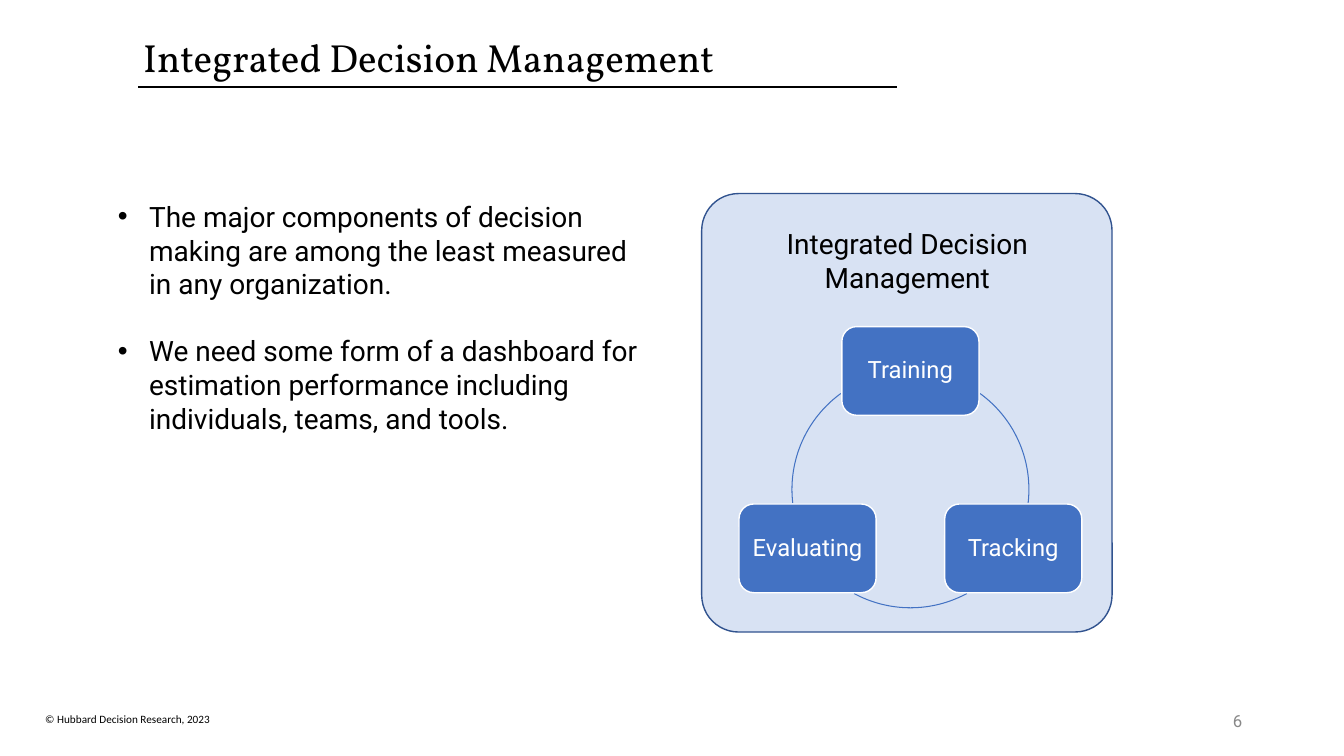
from dataclasses import dataclass

from lxml.etree import SubElement
from pptx import Presentation
from pptx.dml.color import RGBColor
from pptx.enum.shapes import MSO_CONNECTOR, MSO_SHAPE
from pptx.enum.text import MSO_ANCHOR, PP_ALIGN
from pptx.oxml.ns import qn
from pptx.shapes.autoshape import Shape
from pptx.slide import Slide
from pptx.text.text import TextFrame, _Paragraph
from pptx.util import Inches, Pt

BLACK = RGBColor(0x00, 0x00, 0x00)
WHITE = RGBColor(0xFF, 0xFF, 0xFF)
GREY = RGBColor(0x88, 0x88, 0x88)
BLUE = RGBColor(0x43, 0x72, 0xC3)
PALE = RGBColor(0xD8, 0xE2, 0xF3)
NAVY = RGBColor(0x31, 0x53, 0x8F)

NODE_W, NODE_H = 1.36, 0.88
RING_X, RING_Y, RING_R = 9.03, 4.855, 1.175


@dataclass
class Node:
    name: str
    left: float
    top: float


@dataclass
class Arc:
    """Part of the ring, in degrees clockwise from the right."""
    start: float
    end: float


@dataclass
class Label:
    text: str
    box: tuple[float, float, float, float]
    size: float
    font: str = "Roboto"
    color: RGBColor = BLACK
    align: PP_ALIGN = PP_ALIGN.LEFT
    anchor: MSO_ANCHOR = MSO_ANCHOR.TOP


NODES = [
    Node("Training", 8.35, 3.24),
    Node("Tracking", 9.37, 5),
    Node("Evaluating", 7.33, 5),
]
ARCS = [Arc(306, 6.6), Arc(61.6, 118.4), Arc(173.4, 234)]
LABELS = [
    Label("© Hubbard Decision Research, 2023", (0.35, 7.02, 2.5, 0.24), 8, "Calibri"),
    Label("Integrated Decision Management", (7.21, 2.2, 3.58, 0.77), 20,
          align=PP_ALIGN.CENTER),
    Label("6", (9.42, 6.95, 3, 0.4), 12, color=GREY,
          align=PP_ALIGN.RIGHT, anchor=MSO_ANCHOR.MIDDLE),
]
POINTS = [
    "The major components of decision making are among the least measured "
    "in any organization.",
    "We need some form of a dashboard for estimation performance including "
    "individuals, teams, and tools.",
]


def add_run(para: _Paragraph, text: str, size: float, font: str = "Roboto",
            color: RGBColor = BLACK) -> None:
    run = para.add_run()
    run.text = text
    run.font.size = Pt(size)
    run.font.name = font
    run.font.color.rgb = color


def add_shape(slide: Slide, kind: MSO_SHAPE, box: tuple[float, float, float, float],
              line: RGBColor, width: float, fill: RGBColor | None = None) -> Shape:
    shape = slide.shapes.add_shape(kind, *map(Inches, box))
    shape.shadow.inherit = False
    shape.line.color.rgb = line
    shape.line.width = Pt(width)
    if fill is None:
        shape.fill.background()
    else:
        shape.fill.solid()
        shape.fill.fore_color.rgb = fill
    return shape


def add_box(slide: Slide, box: tuple[float, float, float, float]) -> TextFrame:
    frame = slide.shapes.add_textbox(*map(Inches, box)).text_frame
    frame.word_wrap = True
    return frame


def add_label(slide: Slide, label: Label) -> None:
    frame = add_box(slide, label.box)
    frame.vertical_anchor = label.anchor
    para = frame.paragraphs[0]
    para.alignment = label.align
    add_run(para, label.text, label.size, label.font, label.color)


def add_title(slide: Slide) -> None:
    title = slide.shapes.title
    title.left, title.top = Inches(1.32), Inches(0.34)
    title.width, title.height = Inches(8.15), Inches(0.51)
    title.text_frame.vertical_anchor = MSO_ANCHOR.MIDDLE
    para = title.text_frame.paragraphs[0]
    para.alignment = PP_ALIGN.LEFT
    para.line_spacing = 0.9
    add_run(para, "Integrated Decision Management", 28, "Vollkorn")

    rule = slide.shapes.add_connector(
        MSO_CONNECTOR.STRAIGHT, Inches(1.37), Inches(0.86), Inches(8.9), Inches(0.86))
    rule.line.color.rgb = BLACK
    rule.line.width = Pt(1.5)
    SubElement(rule._element.spPr, qn("a:effectLst"))


def add_points(slide: Slide) -> None:
    frame = add_box(slide, (1.07, 1.93, 5.39, 2.46))
    for index, text in enumerate(POINTS):
        para = frame.add_paragraph() if index else frame.paragraphs[0]
        props = para._p.get_or_add_pPr()
        props.set("marL", str(Inches(0.31)))
        props.set("indent", str(-Inches(0.31)))
        SubElement(props, qn("a:buFont")).set("typeface", "Arial")
        SubElement(props, qn("a:buChar")).set("char", "•")
        if index:
            para.space_before = Pt(24)
        add_run(para, text, 20)


def add_arc(slide: Slide, arc: Arc) -> None:
    side = 2 * RING_R
    shape = add_shape(slide, MSO_SHAPE.ARC,
                      (RING_X - RING_R, RING_Y - RING_R, side, side), BLUE, 0.75)
    # Angles are stored in 1/60000 degree, adjustments in 1/100000
    shape.adjustments[0] = arc.start * 0.6
    shape.adjustments[1] = arc.end * 0.6


def add_node(slide: Slide, node: Node) -> None:
    shape = add_shape(slide, MSO_SHAPE.ROUNDED_RECTANGLE,
                      (node.left, node.top, NODE_W, NODE_H), WHITE, 1, BLUE)
    frame = shape.text_frame
    frame.margin_left = frame.margin_right = Inches(0.07)
    frame.vertical_anchor = MSO_ANCHOR.MIDDLE
    para = frame.paragraphs[0]
    para.alignment = PP_ALIGN.CENTER
    para.line_spacing = 0.9
    add_run(para, node.name, 17, color=WHITE)


def main() -> None:
    deck = Presentation()
    deck.slide_width, deck.slide_height = Inches(13.33), Inches(7.5)
    slide = deck.slides.add_slide(deck.slide_layouts[5])
    add_title(slide)
    add_points(slide)
    panel = add_shape(slide, MSO_SHAPE.ROUNDED_RECTANGLE,
                      (6.96, 1.92, 4.07, 4.35), NAVY, 1, PALE)
    panel.adjustments[0] = 0.09
    for arc in ARCS:
        add_arc(slide, arc)
    for node in NODES:
        add_node(slide, node)
    for label in LABELS:
        add_label(slide, label)
    deck.save("out.pptx")


if __name__ == "__main__":
    main()
